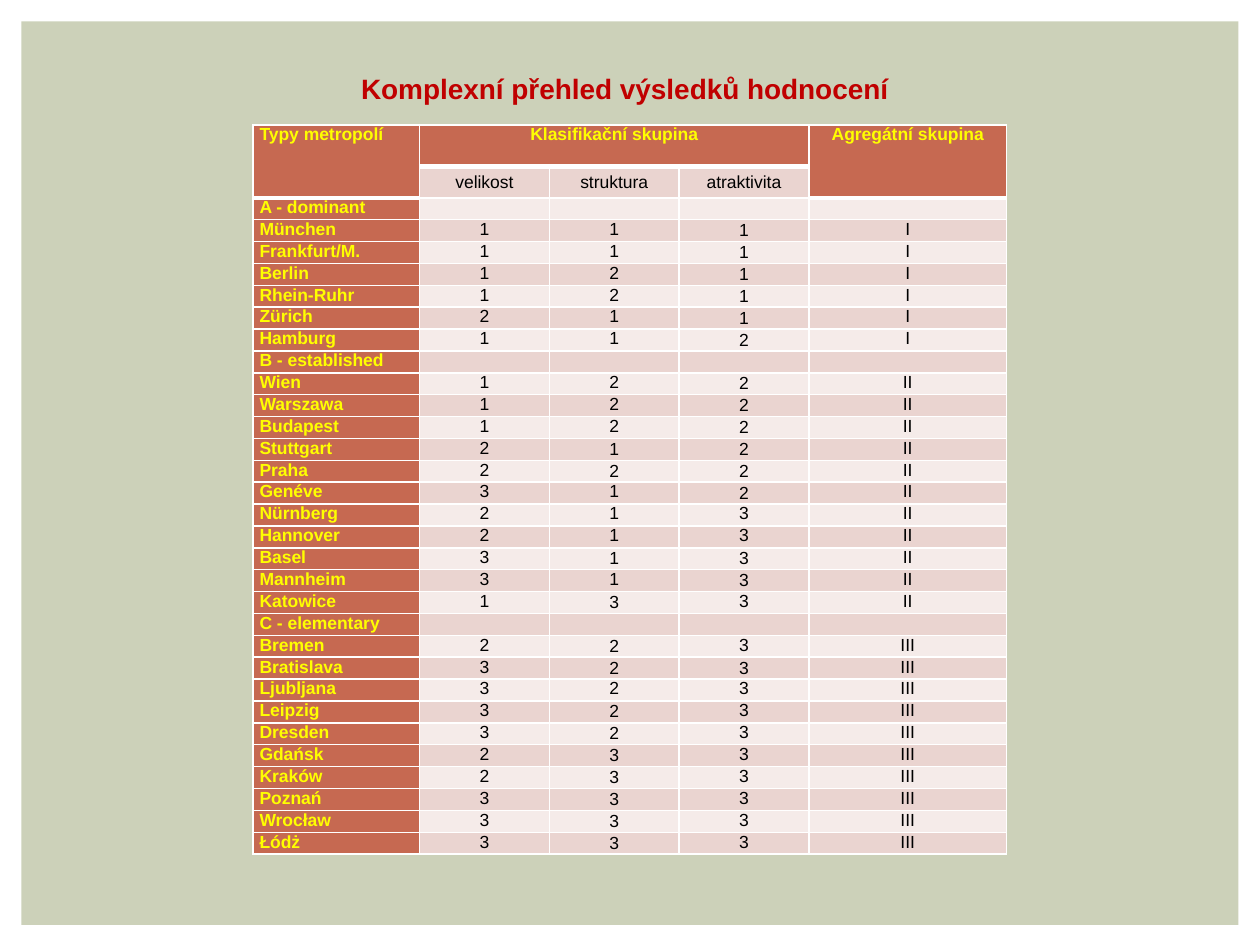
import pptx
import pptx.dml.color
import pptx.enum.shapes
import pptx.enum.text
import pptx.oxml
import pptx.oxml.ns
import pptx.util
from pptx.util import Inches

ALIGN = pptx.enum.text.PP_ALIGN
ANCHOR = pptx.enum.text.MSO_ANCHOR

HEADING = {"name": "Arial", "size": pptx.util.Pt(10), "bold": True}
BODY = {"name": "Arial", "size": pptx.util.Pt(10), "bold": False}
TITLE = {"name": "Arial", "size": pptx.util.Pt(16), "bold": True}
RUST, YELLOW, BLACK, WHITE = "C66951", "FFFF00", "000000", "FFFFFF"
BANDS = ("F5EBE9", "EAD4D0")

COLUMN_WIDTHS = (1.32, 1.03, 1.03, 1.03, 1.57)
HEADER_HEIGHTS = (0.33, 0.25)
HEADER = (
    ("Typy metropolí", "Klasifikační skupina", "", "", "Agregátní skupina"),
    ("", "velikost", "struktura", "atraktivita", ""),
)
# Group, aggregate class, and each city with velikost, struktura, atraktivita
GROUPS = (
    ("A - dominant", "I", (
        ("München", "111"), ("Frankfurt/M.", "111"), ("Berlin", "121"),
        ("Rhein-Ruhr", "121"), ("Zürich", "211"), ("Hamburg", "112"),
    )),
    ("B - established", "II", (
        ("Wien", "122"), ("Warszawa", "122"), ("Budapest", "122"),
        ("Stuttgart", "212"), ("Praha", "222"), ("Genéve", "312"),
        ("Nürnberg", "213"), ("Hannover", "213"), ("Basel", "313"),
        ("Mannheim", "313"), ("Katowice", "133"),
    )),
    ("C - elementary", "III", (
        ("Bremen", "223"), ("Bratislava", "323"), ("Ljubljana", "323"),
        ("Leipzig", "323"), ("Dresden", "323"), ("Gdańsk", "233"),
        ("Kraków", "233"), ("Poznań", "333"), ("Wrocław", "333"),
        ("Łódż", "333"),
    )),
)
# Cities whose value is centred vertically, by column
MIDDLE = {
    2: {"Stuttgart", "Praha", "Basel", "Katowice", "Bremen", "Bratislava",
        "Leipzig", "Dresden", "Gdańsk", "Kraków", "Poznań", "Wrocław", "Łódż"},
    3: {"München", "Frankfurt/M.", "Berlin", "Rhein-Ruhr", "Zürich", "Hamburg",
        "Wien", "Warszawa", "Budapest", "Stuttgart", "Praha", "Genéve",
        "Basel", "Mannheim", "Bratislava"},
}


def color(value):
    return pptx.dml.color.RGBColor.from_string(value)


def write(para, text, values, ink, align):
    para.alignment = align
    span = para.add_run()
    span.text = text
    for name, value in values.items():
        setattr(span.font, name, value)
    span.font.color.rgb = color(ink)


def set_borders(cell, widths):
    """Draw white borders; widths maps L, R, T and B to points."""
    properties = cell._tc.get_or_add_tcPr()
    for side, width in widths.items():
        properties.append(pptx.oxml.parse_xml(
            f'<a:ln{side} {pptx.oxml.ns.nsdecls("a")} w="{pptx.util.Pt(width)}">'
            f'<a:solidFill><a:srgbClr val="{WHITE}"/></a:solidFill></a:ln{side}>'))


def shrink_empty(para):
    """Keep an empty cell from stretching its row."""
    para._p.append(pptx.oxml.parse_xml(
        f'<a:endParaRPr {pptx.oxml.ns.nsdecls("a")} sz="1000"/>'))


def table_rows():
    rows = list(HEADER)
    for group, aggregate, cities in GROUPS:
        rows.append((group, "", "", "", ""))
        rows.extend((city, *scores, aggregate) for city, scores in cities)
    return rows


def fill_cell(cell, row, column, text, city):
    outer = column in (0, 4)
    heading = column == 0 or row == 0 or (row == 1 and outer)
    header_end = 1 if outer else 0
    set_borders(cell, {
        "L": 1, "R": 1,
        "T": 3 if row == header_end + 1 else 1,
        "B": 3 if row <= header_end else 1,
    })
    cell.fill.solid()
    cell.fill.fore_color.rgb = color(RUST if heading else BANDS[row % 2])
    cell.margin_left = cell.margin_right = Inches(0.05)
    cell.margin_top = cell.margin_bottom = 0
    middle = (row == 1 and not outer) or city in MIDDLE.get(column, ())
    cell.vertical_anchor = ANCHOR.MIDDLE if middle else ANCHOR.TOP
    para = cell.text_frame.paragraphs[0]
    if text:
        write(para, text, HEADING if heading else BODY,
              YELLOW if heading else BLACK,
              ALIGN.LEFT if column == 0 else ALIGN.CENTER)
    else:
        shrink_empty(para)


def add_results(page, left, top, width, height):
    rows = table_rows()
    table = page.shapes.add_table(
        len(rows), len(COLUMN_WIDTHS),
        Inches(left), Inches(top), Inches(width), Inches(height)).table
    table.first_row = table.horz_banding = False
    for column, size in zip(table.columns, COLUMN_WIDTHS):
        column.width = Inches(size)
    body_count = len(rows) - len(HEADER)
    body_height = (height - sum(HEADER_HEIGHTS)) / body_count
    for line, size in zip(table.rows, HEADER_HEIGHTS + (body_height,) * body_count):
        line.height = Inches(size)
    for row, texts in enumerate(rows):
        for column, text in enumerate(texts):
            fill_cell(table.cell(row, column), row, column, text, texts[0])
    for first, last in (((0, 0), (1, 0)), ((0, 1), (0, 3)), ((0, 4), (1, 4))):
        table.cell(*first).merge(table.cell(*last))


def add_backdrop(page, left, top, width, height):
    panel = page.shapes.add_shape(
        pptx.enum.shapes.MSO_SHAPE.RECTANGLE,
        Inches(left), Inches(top), Inches(width), Inches(height))
    panel.shadow.inherit = False
    panel.fill.solid()
    panel.fill.fore_color.rgb = color("CCD1B9")
    panel.line.fill.background()


def add_title(page, left, top, width, height):
    box = page.shapes.add_textbox(
        Inches(left), Inches(top), Inches(width), Inches(height))
    box.text_frame.word_wrap = True
    box.text_frame.vertical_anchor = ANCHOR.MIDDLE
    write(box.text_frame.paragraphs[0], "Komplexní přehled výsledků hodnocení",
          TITLE, "C00000", ALIGN.CENTER)


def main():
    deck = pptx.Presentation()
    deck.slide_width, deck.slide_height = Inches(10), Inches(7.5)
    page = deck.slides.add_slide(deck.slide_layouts[6])
    add_backdrop(page, 0.17, 0.17, 9.66, 7.17)
    add_results(page, 2.01, 0.99, 5.98, 5.79)
    add_title(page, 2.71, 0.5, 4.5, 0.4)
    deck.save("out.pptx")


if __name__ == "__main__":
    main()
